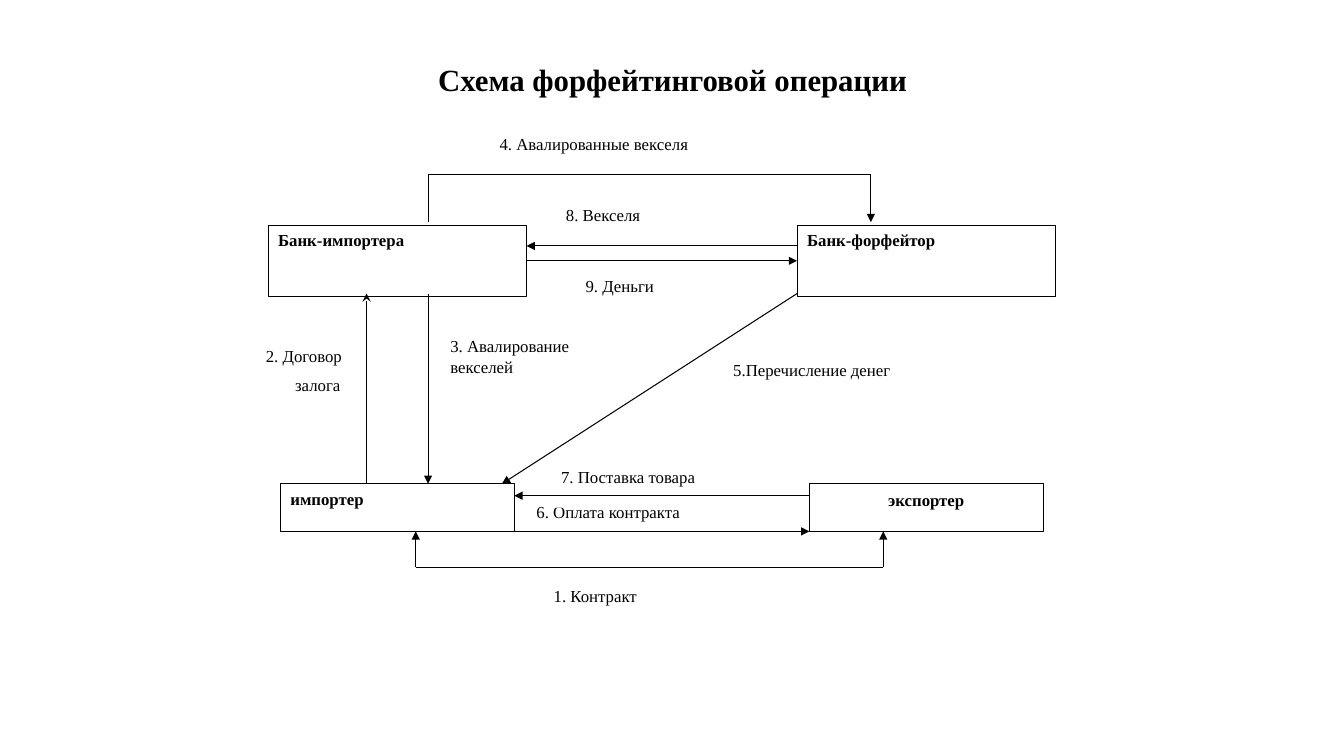
from lxml.etree import SubElement
from pptx import Presentation
from pptx.dml.color import RGBColor
from pptx.enum.shapes import MSO_CONNECTOR, MSO_SHAPE
from pptx.enum.text import MSO_ANCHOR, PP_ALIGN as Align
from pptx.oxml.ns import qn
from pptx.util import Inches, Pt

BLACK, WHITE = "000000", "FFFFFF"
LEFT, TOP, COLUMN, ROW = 2.66, 1.26, 0.122, 0.118

deck = Presentation()
deck.slide_width, deck.slide_height = Inches(13.33), Inches(7.5)
page = deck.slides.add_slide(deck.slide_layouts[6])


def color(code):
    return RGBColor.from_string(code)


def write(para, text, size=12, bold=False):
    span = para.add_run()
    span.text = text
    span.font.name = "Times New Roman"
    span.font.size = Pt(size)
    span.font.bold = bold
    span.font.color.rgb = color(BLACK)


title = page.shapes.add_textbox(Inches(0.92), Inches(0.6), Inches(11.5), Inches(0.5))
title.text_frame.word_wrap = True
heading = title.text_frame.paragraphs[0]
heading.alignment = Align.CENTER
heading.line_spacing = 0.9
write(heading, "Схема форфейтинговой операции", 22, True)

# column, row, columns, rows, lines of text, framed, alignment, line spacing
blocks = [
    (25, 12, 17, 4, ["9. Деньги"], False, Align.LEFT, 1.07),
    (14, 17, 13, 6, ["3. Авалирование векселей"], False, Align.LEFT, 1.07),
    (23.4, 6, 18.6, 3, ["8. Векселя"], False, Align.LEFT, 1.07),
    (-1, 18, 10, 7, ["2. Договор", "залога"], False, Align.LEFT, 1),
    (22.4, 38, 21.6, 3, ["1. Контракт"], False, Align.LEFT, 1.07),
    (21, 31, 21, 3, ["6. Оплата контракта"], False, Align.LEFT, 1.07),
    (23, 28, 16, 4, ["7. Поставка товара"], False, Align.LEFT, 1.07),
    (37, 19, 21.5, 5, ["5.Перечисление денег"], False, Align.LEFT, 1.07),
    (18, 0, 26, 3, ["4. Авалированные векселя"], False, Align.LEFT, 1.07),
    (0, 8.25, 21, 6, ["Банк-импортера"], True, Align.LEFT, 1),
    (43, 8.25, 21, 6, ["Банк-форфейтор"], True, Align.LEFT, 1),
    (1, 30, 19, 4, ["импортер"], True, Align.LEFT, 1),
    (44, 30, 19, 4, ["экспортер"], True, Align.CENTER, 1.07),
]
for column, row, columns, rows, lines, framed, alignment, spacing in blocks:
    box = page.shapes.add_shape(
        MSO_SHAPE.RECTANGLE, Inches(LEFT + column * COLUMN), Inches(TOP + row * ROW),
        Inches(columns * COLUMN), Inches(rows * ROW))
    box.shadow.inherit = False
    box.fill.solid()
    box.fill.fore_color.rgb = color(WHITE)
    if framed:
        box.line.color.rgb = color(BLACK)
        box.line.width = Pt(0.75)
    else:
        box.line.fill.background()
    frame = box.text_frame
    frame.word_wrap = True
    frame.vertical_anchor = MSO_ANCHOR.TOP
    for index, text in enumerate(lines):
        para = frame.paragraphs[0] if index == 0 else frame.add_paragraph()
        para.alignment = alignment
        para.line_spacing = spacing
        para.space_after = Pt(6)
        if index:
            para._p.get_or_add_pPr().set("marL", str(Inches(0.29)))
        write(para, text, bold=framed)

arrows = [
    (21, 11.25, 43, 11.25, "triangle"),
    (43, 10, 21, 10, "triangle"),
    (13, 14, 13, 30, "triangle"),
    (8, 30, 8, 14, "stealth"),
    (12, 37, 50, 37, None),
    (12, 37, 12, 34, "triangle"),
    (50, 37, 50, 34, "triangle"),
    (20, 34, 44, 34, "triangle"),
    (44, 31, 20, 31, "triangle"),
    (43, 14, 19, 30, "triangle"),
    (13, 4, 49, 4, None),
    (49, 4, 49, 8, "triangle"),
    (13, 4, 13, 8, None),
]
for start_column, start_row, end_column, end_row, tip in arrows:
    arrow = page.shapes.add_connector(
        MSO_CONNECTOR.STRAIGHT,
        Inches(LEFT + start_column * COLUMN), Inches(TOP + start_row * ROW),
        Inches(LEFT + end_column * COLUMN), Inches(TOP + end_row * ROW))
    arrow.line.color.rgb = color(BLACK)
    arrow.line.width = Pt(0.75)
    if tip:
        SubElement(arrow.line._get_or_add_ln(), qn("a:tailEnd"), type=tip)
    SubElement(arrow._element.spPr, qn("a:effectLst"))

deck.save("out.pptx")
